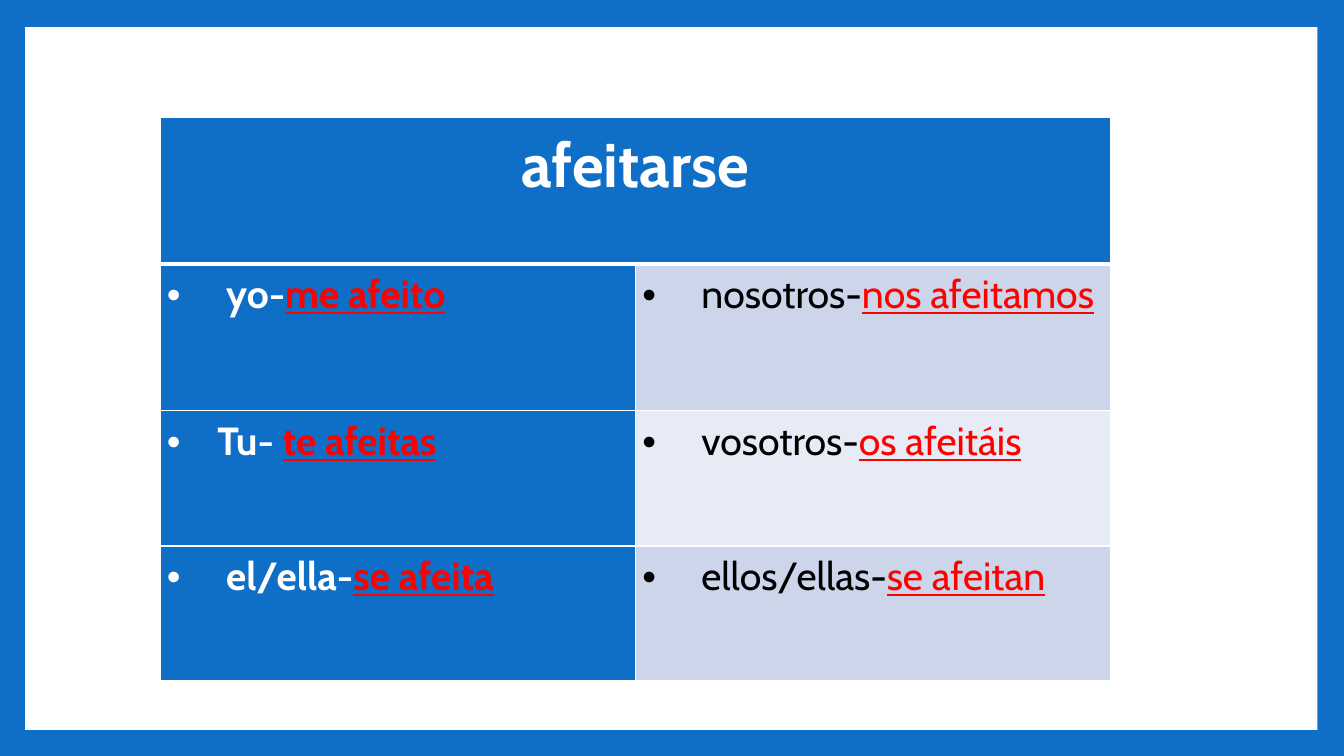
from dataclasses import dataclass

from pptx import Presentation
from pptx import util as u
from pptx.dml.color import RGBColor
from pptx.enum import shapes, text
from pptx.oxml import parse_xml
from pptx.oxml.ns import nsdecls


@dataclass(frozen=True)
class Theme:
    font: str = "Cabin"
    blue: str = "0F6FC6"
    white: str = "FFFFFF"
    black: str = "000000"
    red: str = "FF0000"
    bands: tuple = ("CCD5EA", "E7EBF5")
    head: float = 44
    body: float = 28
    thin: float = 1
    thick: float = 3


class Deck:
    def __init__(self, theme):
        self.theme = theme
        self.file = Presentation()
        self.file.slide_width = u.Pt(960)
        self.file.slide_height = u.Pt(540)
        self.slide = self.file.slides.add_slide(self.file.slide_layouts[6])

    def paint(self, fill, color):
        fill.solid()
        fill.fore_color.rgb = RGBColor.from_string(color)

    def panel(self, box, color):
        shape = self.slide.shapes.add_shape(
            shapes.MSO_SHAPE.RECTANGLE, *map(u.Pt, box))
        shape.shadow.inherit = False
        self.paint(shape.fill, color)
        shape.line.fill.background()

    def table(self, left, top, cols, rows):
        frame = self.slide.shapes.add_table(
            len(rows), len(cols), *map(u.Pt, (left, top, sum(cols), sum(rows))))
        grid = frame.table
        for col, width in zip(grid.columns, cols):
            col.width = u.Pt(width)
        for row, height in zip(grid.rows, rows):
            row.height = u.Pt(height)
        return grid

    def cell(self, cell, color, top, base):
        theme = self.theme
        props = cell._tc.get_or_add_tcPr()
        for side, width in zip("LRTB", (theme.thin, theme.thin, top, base)):
            props.append(parse_xml(
                f'<a:ln{side} {nsdecls("a")} w="{u.Pt(width)}"><a:solidFill>'
                f'<a:srgbClr val="{theme.white}"/></a:solidFill></a:ln{side}>'))
        self.paint(cell.fill, color)
        cell.margin_left = cell.margin_right = u.Pt(5)
        cell.margin_top = cell.margin_bottom = 0
        para = cell.text_frame.paragraphs[0]
        para.line_spacing = 1.15
        para.space_after = u.Pt(10)
        return para

    def bullet(self, para, indent):
        props = para._p.get_or_add_pPr()
        props.set("marL", str(u.Pt(indent)))
        props.set("indent", str(-u.Pt(indent)))
        props.append(parse_xml(f'<a:buFont {nsdecls("a")} typeface="Arial"/>'))
        props.append(parse_xml(f'<a:buChar {nsdecls("a")} char="•"/>'))

    def run(self, para, words, size, color, bold, under=False):
        run = para.add_run()
        run.text = words
        font = run.font
        font.name = self.theme.font
        font.size = u.Pt(size)
        font.bold = bold
        font.underline = under
        font.color.rgb = RGBColor.from_string(color)


VERBS = (
    ((" yo-", "me afeito"), (" nosotros-", "nos afeitamos")),
    (("Tu- ", "te afeitas"), (" vosotros-", "os afeitáis")),
    ((" el/ella-", "se afeita"), (" ellos/ellas-", "se afeitan")),
)


def main():
    theme = Theme()
    deck = Deck(theme)
    deck.paint(deck.slide.background.fill, theme.blue)
    deck.panel((18, 19.4, 923, 502), theme.white)

    grid = deck.table(114.3, 83.5, (339.5,) * 2, (105, 105, 96.5, 96.5))
    grid.cell(0, 0).merge(grid.cell(0, 1))
    for col in (1, 0):
        para = deck.cell(grid.cell(0, col), theme.blue, theme.thin, theme.thick)
    para.alignment = text.PP_ALIGN.CENTER
    deck.run(para, "afeitarse", theme.head, theme.white, True)

    for row, pair in enumerate(VERBS, 1):
        top = theme.thick if row == 1 else theme.thin
        band = theme.bands[(row - 1) % 2]
        looks = ((theme.blue, theme.white, True), (band, theme.black, False))
        for col, ((who, verb), (fill, ink, bold)) in enumerate(zip(pair, looks)):
            para = deck.cell(grid.cell(row, col), fill, top, theme.thin)
            deck.bullet(para, 36)
            deck.run(para, who, theme.body, ink, bold)
            deck.run(para, verb, theme.body, theme.red, bold, True)

    deck.file.save("out.pptx")


if __name__ == "__main__":
    main()
